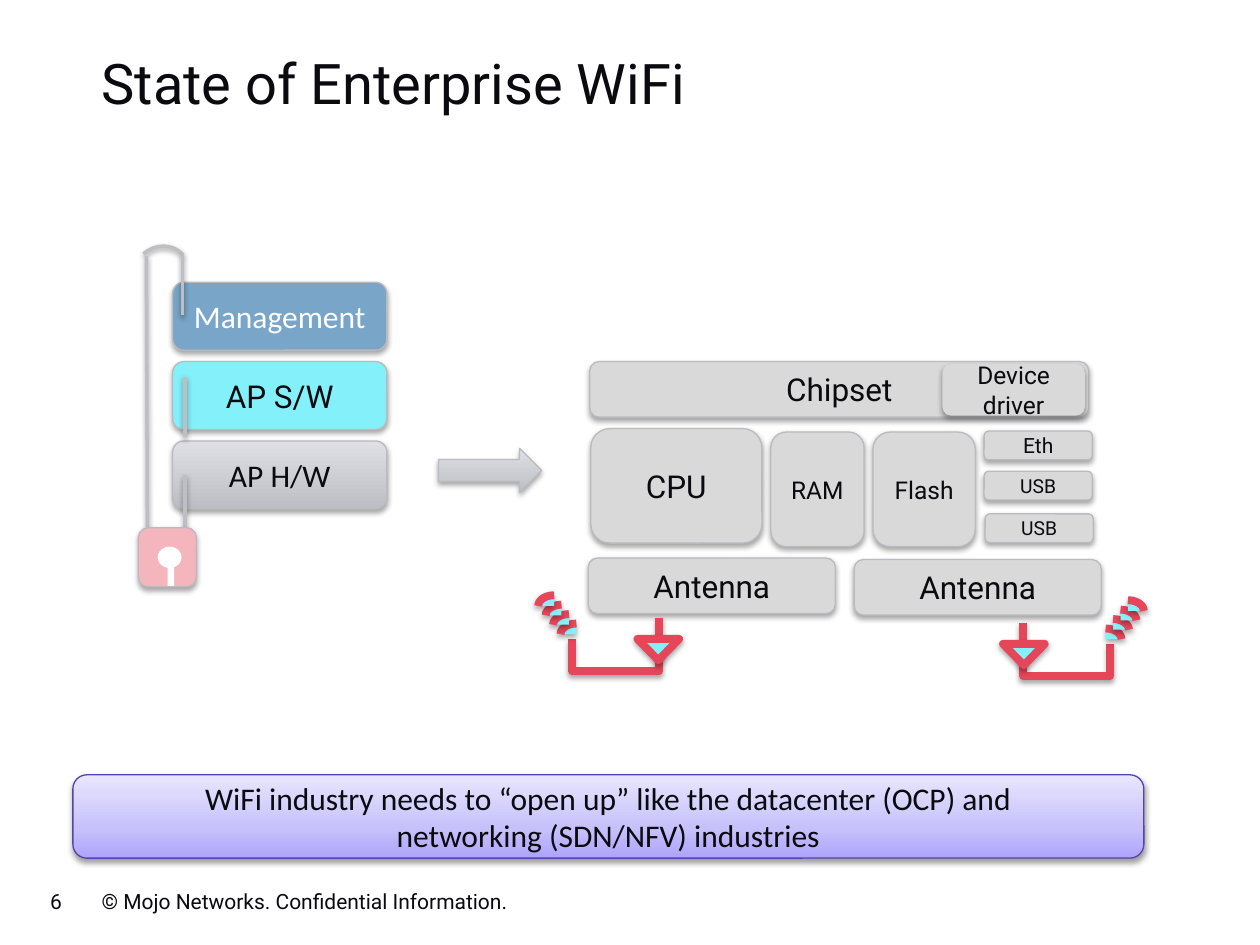
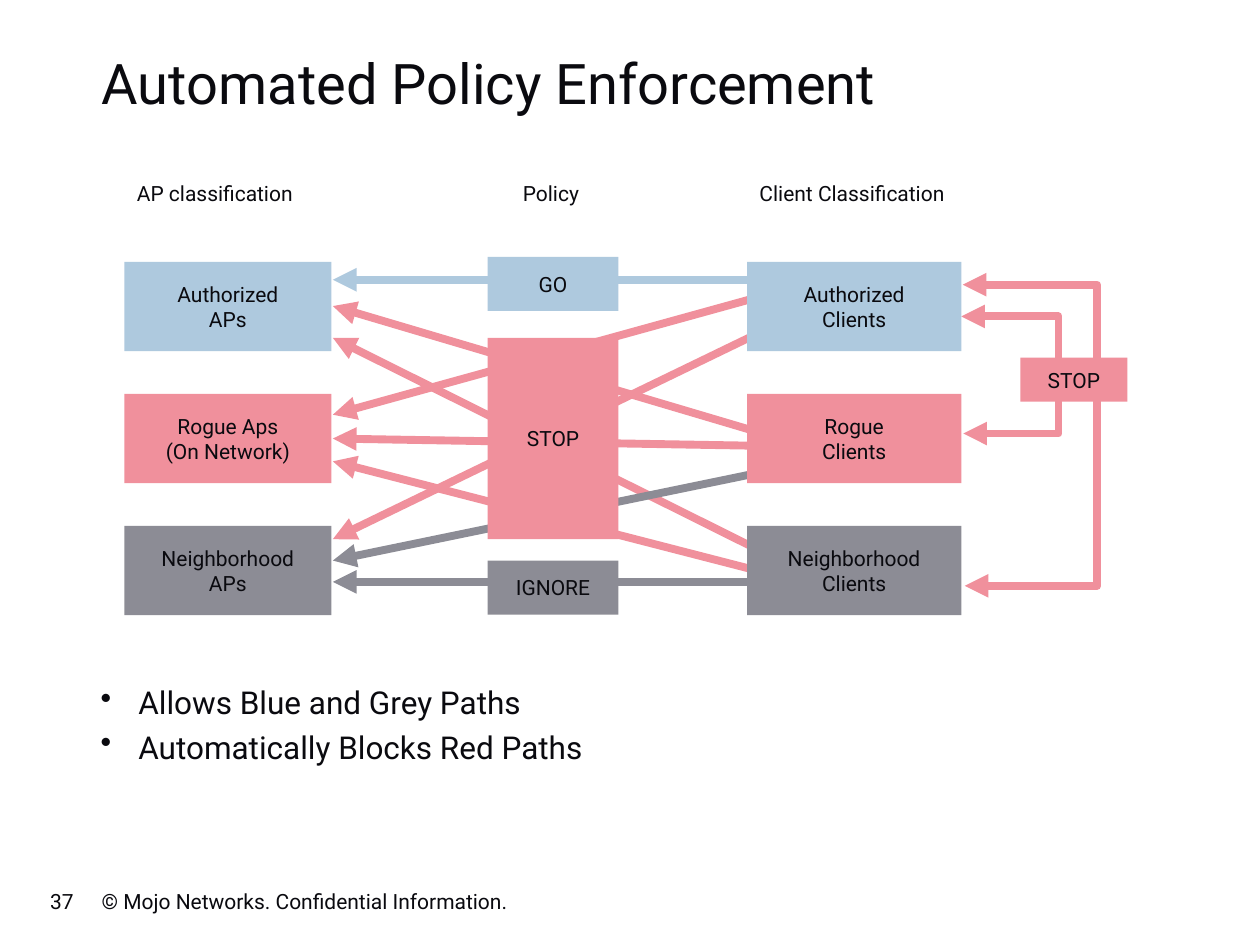
"""Build two slides on enterprise WiFi and automated policy enforcement."""
from copy import deepcopy

from lxml import etree
from pptx import Presentation
from pptx.dml.color import RGBColor
from pptx.enum.shapes import MSO_CONNECTOR, MSO_SHAPE
from pptx.enum.text import MSO_ANCHOR, PP_ALIGN
from pptx.oxml.ns import qn
from pptx.util import Cm, Pt

ROUND, RECT, OVAL = MSO_SHAPE.ROUNDED_RECTANGLE, MSO_SHAPE.RECTANGLE, MSO_SHAPE.OVAL
ARC, TRIANGLE, ARROW = MSO_SHAPE.ARC, MSO_SHAPE.ISOSCELES_TRIANGLE, MSO_SHAPE.RIGHT_ARROW
STRAIGHT, ELBOW = MSO_CONNECTOR.STRAIGHT, MSO_CONNECTOR.ELBOW
LEFT, CENTER = PP_ALIGN.LEFT, PP_ALIGN.CENTER
TOP, MIDDLE = MSO_ANCHOR.TOP, MSO_ANCHOR.MIDDLE

INK = RGBColor(0x0A, 0x0A, 0x0F)
WHITE = RGBColor(0xFF, 0xFF, 0xFF)
EDGE = RGBColor(0xBA, 0xBA, 0xBF)
SHACKLE = RGBColor(0xBE, 0xBE, 0xC3)
PART = RGBColor(0xD9, 0xD9, 0xD9)
STEEL = RGBColor(0x78, 0xA5, 0xC8)
CYAN = RGBColor(0x84, 0xF0, 0xF9)
PINK = RGBColor(0xF5, 0xB5, 0xBD)
SIGNAL = RGBColor(0xE6, 0x46, 0x5A)
VIOLET = RGBColor(0x56, 0x42, 0xB3)
BLUE = RGBColor(0xAE, 0xC9, 0xDE)
RED = RGBColor(0xF0, 0x90, 0x9C)
GREY = RGBColor(0x8C, 0x8C, 0x95)
SILVER = [(0, RGBColor(0xBD, 0xBD, 0xC4)), (1, RGBColor(0xDF, 0xDF, 0xE6))]
LILAC = [(0, RGBColor(0xAD, 0xA4, 0xFB)), (0.35, RGBColor(0xC6, 0xC0, 0xFB)),
         (1, RGBColor(0xE8, 0xE6, 0xFE))]

BODY_FONT, ALT_FONT = "Roboto", "Calibri"
COPYRIGHT = "© Mojo Networks. Confidential Information."
SOFT, DEEP = (38, 20000), (35, 23000)

MESSAGE = ["WiFi industry needs to “open up” like the datacenter (OCP) and",
           "networking (SDN/NFV) industries"]
AP_STACK = [("Management", STEEL, WHITE, ALT_FONT), ("AP S/W", CYAN, INK, BODY_FONT),
            ("AP H/W", SILVER, INK, ALT_FONT)]
SHACKLE_LINES = [(3.73, 10.8, 3.73, 9.58), (3.73, 8.81, 3.73, 7.59),
                 (3.68, 6.35, 3.68, 5.13), (2.97, 10.62, 2.95, 5.16)]
HARDWARE = [
    ("Antenna", 18, (11.86, 11.25, 4.98, 1.12)),
    ("CPU", 18, (11.91, 8.64, 3.45, 2.31)),
    ("Chipset", 18, (11.89, 7.29, 10.06, 1.12)),
    ("Antenna", 18, (17.22, 11.28, 4.98, 1.12)),
    ("Device driver", 14, (19, 7.34, 2.87, 1.04)),
    ("RAM", 14, (15.54, 8.71, 1.88, 2.31)),
    ("Flash", 14, (17.6, 8.71, 2.06, 2.31)),
    ("Eth", 12, (19.84, 8.69, 2.18, 0.58)),
    ("USB", 11, (19.84, 9.5, 2.18, 0.58)),
    ("USB", 11, (19.86, 10.36, 2.18, 0.58)),
]
AERIAL_MIRROR, AERIAL_DROP = 33.91, 0.1

HEADINGS = [("AP classification", 2.51, 3.86), ("Policy", 10.29, 1.75),
            ("Client Classification", 15.06, 4.57)]
CLASSES = [(BLUE, ["Authorized", "APs"], ["Authorized", "Clients"]),
           (RED, ["Rogue Aps", "(On Network)"], ["Rogue", "Clients"]),
           (GREY, ["Neighborhood", "APs"], ["Neighborhood", "Clients"])]
POLICIES = [("GO", BLUE, (9.83, 5.18, 2.64, 1.09)), ("STOP", RED, (9.83, 6.81, 2.64, 4.06)),
            ("IGNORE", GREY, (9.83, 11.3, 2.64, 1.09)), ("STOP", RED, (20.57, 7.21, 2.16, 0.89))]
AP_EDGE = 6.71
PATHS = [(BLUE, 15.06, 5.64, 5.64), (RED, 15.72, 8.84, 6.17), (RED, 15.49, 8.99, 8.84),
         (RED, 15.72, 5.87, 8.36), (RED, 16.15, 6.3, 10.87), (RED, 15.72, 11.3, 6.81),
         (RED, 16.15, 11.73, 9.3), (GREY, 15.93, 9.4, 11.3), (GREY, 15.93, 11.73, 11.73)]
CLIENT_LOOPS = [((19.41, 5.74, 0.04, 6.07), 2.71), ((19.38, 6.38, 0.04, 2.36), 1.96)]
TAKEAWAYS = ["Allows Blue and Grey Paths", "Automatically Blocks Red Paths"]


def write(shape, lines, size, font=BODY_FONT, color=INK, align=LEFT, anchor=TOP):
    frame = shape.text_frame
    frame.vertical_anchor = anchor
    frame.text = "\n".join(lines)
    for paragraph in frame.paragraphs:
        paragraph.alignment = align
        paragraph.font.size, paragraph.font.name = Pt(size), font
        paragraph.font.color.rgb = color


def add_text(slide, box, lines, size, wrap=True, **style):
    label = slide.shapes.add_textbox(*map(Cm, box))
    label.text_frame.word_wrap = wrap
    write(label, lines, size, **style)
    return label


def add_shadow(effects, shadow):
    alpha, distance = shadow
    outer = etree.SubElement(effects, qn("a:outerShdw"), blurRad="40000", dist=str(distance),
                             dir="5400000", rotWithShape="0")
    black = etree.SubElement(outer, qn("a:srgbClr"), val="000000")
    etree.SubElement(black, qn("a:alpha"), val=str(alpha * 1000))


def paint(shape, fill):
    if fill is None:
        shape.fill.background()
    elif isinstance(fill, list):
        shape.fill.gradient()
        shape.fill.gradient_angle = 90
        stops = shape.element.spPr.find(".//" + qn("a:gsLst"))
        while len(stops) < len(fill):
            stops.append(deepcopy(stops[-1]))
        for stop, (position, color) in zip(shape.fill.gradient_stops, fill):
            stop.position, stop.color.rgb = position, color
    else:
        shape.fill.solid()
        shape.fill.fore_color.rgb = fill


def add_block(slide, kind, box, fill, line=None, width=0.75, shadow=None, rotation=0, flip=False):
    block = slide.shapes.add_shape(kind, *map(Cm, box))
    paint(block, fill)
    if line is None:
        block.line.fill.background()
    else:
        block.line.color.rgb, block.line.width = line, Pt(width)
    block.shadow.inherit = False
    if shadow:
        add_shadow(block.element.spPr.find(qn("a:effectLst")), shadow)
    block.rotation = rotation
    if flip:
        block.element.spPr.find(qn("a:xfrm")).set("flipH", "1")
    return block


def add_label_block(slide, kind, box, fill, lines, size, line=None, shadow=None, **style):
    block = add_block(slide, kind, box, fill, line, shadow=shadow)
    block.text_frame.word_wrap = True
    write(block, lines, size, align=CENTER, anchor=MIDDLE, **style)


def add_line(slide, kind, ends, color, width=4.5, shadow=None, arrows=()):
    line = slide.shapes.add_connector(kind, *map(Cm, ends))
    line.line.color.rgb, line.line.width = color, Pt(width)
    outline = line.line._get_or_add_ln()
    for end in arrows:
        etree.SubElement(outline, qn("a:" + end), type="triangle")
    effects = etree.SubElement(line.element.spPr, qn("a:effectLst"))
    if shadow:
        add_shadow(effects, shadow)
    return line


def add_elbow(slide, box, reach, color, rotation=0, flip=False, **style):
    left, top, width, height = box
    elbow = add_line(slide, ELBOW, (left, top, left + width, top + height), color, **style)
    properties = elbow.element.spPr
    guides = properties.find(qn("a:prstGeom")).find(qn("a:avLst"))
    etree.SubElement(guides, qn("a:gd"), name="adj1", fmla=f"val {round(reach / width * 100000)}")
    transform = properties.find(qn("a:xfrm"))
    transform.set("rot", str(rotation * 60000))
    if flip:
        transform.set("flipH", "1")


def add_aerial(slide, mirrored):
    def place(left, top, width, height):
        if mirrored:
            return AERIAL_MIRROR - left - width, top + AERIAL_DROP, width, height
        return left, top, width, height

    add_elbow(slide, place(12.19, 11.79, 0.43, 1.75), 1.08, SIGNAL,
              rotation=270 if mirrored else 90, flip=mirrored, shadow=DEEP)
    style = dict(fill=CYAN, line=SIGNAL, width=4.5, shadow=DEEP)
    add_block(slide, TRIANGLE, place(12.85, 12.88, 0.84, 0.43), rotation=180, **style)
    for wave in range(4):
        add_block(slide, ARC, place(11.3 - 0.15 * wave, 12.57 - 0.19 * wave, 0.64, 0.43),
                  flip=not mirrored, **style)


def add_padlock(slide):
    add_block(slide, ARC, (2.67, 4.98, 1.17, 1.09), None, SHACKLE, 2, SOFT, rotation=318.2)
    for ends in SHACKLE_LINES:
        add_line(slide, STRAIGHT, ends, SHACKLE, 2, SOFT)
    add_block(slide, ROUND, (2.79, 10.64, 1.17, 1.19), PINK, EDGE, shadow=DEEP)
    add_block(slide, OVAL, (3.18, 11.02, 0.48, 0.43), WHITE)
    add_block(slide, RECT, (3.38, 11.2, 0.13, 0.61), WHITE)


def add_page(deck, title, number):
    slide = deck.slides.add_slide(deck.slide_layouts[6])
    add_text(slide, (1.8, 17.78, 9.35, 0.76), [COPYRIGHT], 12)
    add_text(slide, (0.76, 17.78, 1.78, 0.76), [str(number)], 12)
    heading = add_text(slide, (1.8, 0.76, 21.59, 1.9), [title], 32, anchor=MIDDLE)
    heading.text_frame.margin_bottom = Cm(0.25)
    return slide


def build_wifi_state(deck):
    slide = add_page(deck, "State of Enterprise WiFi", 6)
    add_label_block(slide, ROUND, (1.47, 15.62, 21.59, 1.68), LILAC, MESSAGE, 18,
                    line=VIOLET, shadow=SOFT, font=ALT_FONT)
    for row, (name, fill, color, font) in enumerate(AP_STACK):
        add_label_block(slide, ROUND, (3.48, 5.69 + 1.6 * row, 4.32, 1.37), fill, [name], 18,
                        line=EDGE, shadow=DEEP, font=font, color=color)
    add_padlock(slide)
    for name, size, box in HARDWARE:
        add_label_block(slide, ROUND, box, PART, [name], size, shadow=DEEP,
                        line=None if name == "Device driver" else EDGE)
    for mirrored in (False, True):
        add_aerial(slide, mirrored)
    add_block(slide, ARROW, (8.84, 9.04, 2.08, 0.89), SILVER, EDGE, shadow=DEEP)


def build_policy(deck):
    slide = add_page(deck, "Automated Policy Enforcement", 37)
    for color, client_x, client_y, ap_y in PATHS:
        add_line(slide, STRAIGHT, (client_x, client_y, AP_EDGE, ap_y), color, arrows=["tailEnd"])
    for box, reach in CLIENT_LOOPS:
        add_elbow(slide, box, reach, RED, arrows=["headEnd", "tailEnd"])
    for row, (color, access_points, clients) in enumerate(CLASSES):
        top = 5.28 + 2.66 * row
        add_label_block(slide, RECT, (2.51, top, 4.17, 1.8), color, access_points, 12)
        add_label_block(slide, RECT, (15.06, top, 4.32, 1.8), color, clients, 12)
    for name, color, box in POLICIES:
        add_label_block(slide, RECT, box, color, [name], 12)
    for name, left, width in HEADINGS:
        add_text(slide, (left, 3.51, width, 0.76), [name], 12, wrap=False)
    add_takeaways(slide)


def add_takeaways(slide):
    frame = slide.shapes.add_textbox(Cm(1.78), Cm(13.64), Cm(21.59), Cm(3.33)).text_frame
    frame.word_wrap = True
    for index, takeaway in enumerate(TAKEAWAYS):
        paragraph = frame.add_paragraph() if index else frame.paragraphs[0]
        paragraph.text = takeaway
        if index:
            paragraph.space_before = Pt(4)
        properties = paragraph._p.get_or_add_pPr()
        properties.set("marL", str(Cm(0.76)))
        properties.set("indent", str(-Cm(0.76)))
        bullet_color = etree.SubElement(properties, qn("a:buClr"))
        etree.SubElement(bullet_color, qn("a:srgbClr"), val=str(INK))
        etree.SubElement(properties, qn("a:buChar"), char="•")
        paragraph.font.size, paragraph.font.name = Pt(18), BODY_FONT
        paragraph.font.color.rgb = INK


def main():
    deck = Presentation()
    deck.slide_width, deck.slide_height = Cm(25.4), Cm(19.05)
    build_wifi_state(deck)
    build_policy(deck)
    deck.save("out.pptx")


if __name__ == "__main__":
    main()
